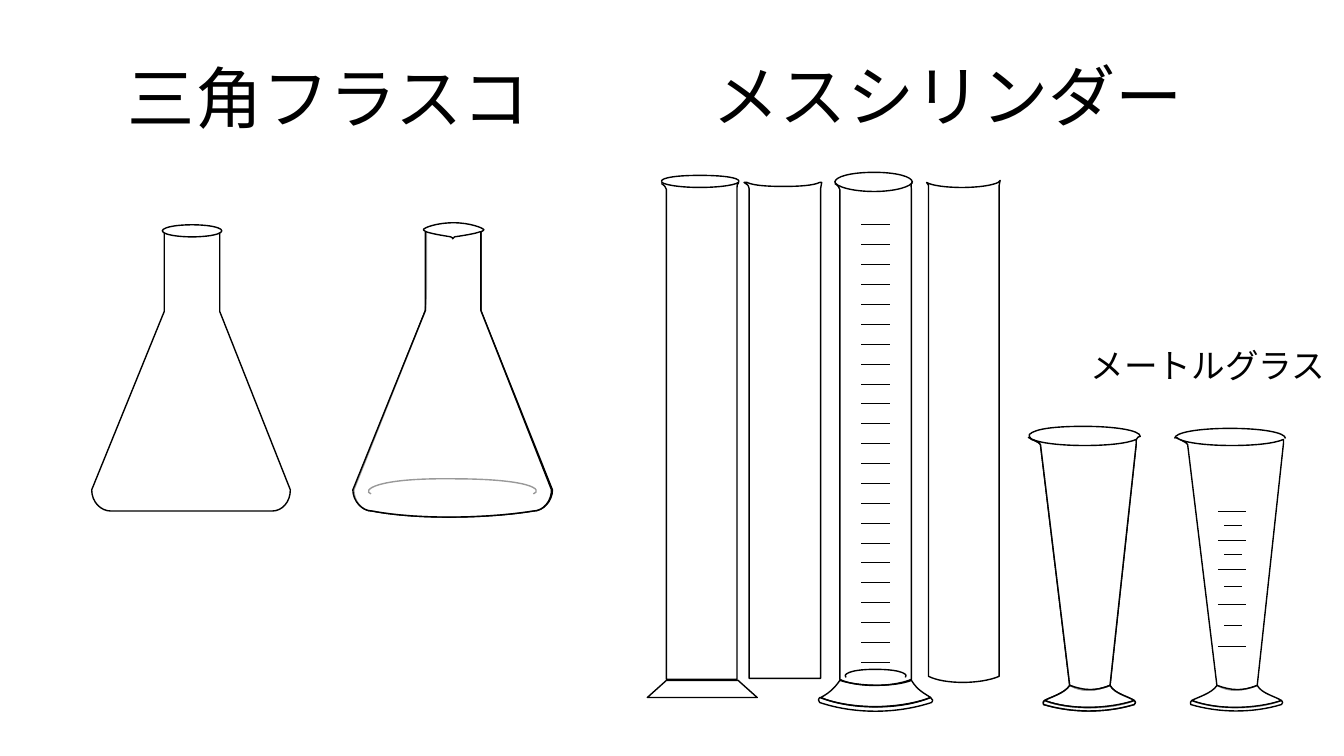
from lxml.etree import SubElement
from pptx import Presentation
from pptx.dml.color import RGBColor
from pptx.enum.shapes import MSO_CONNECTOR as Connector, MSO_SHAPE as Shape
from pptx.oxml.ns import qn
from pptx.util import Inches, Pt

BLACK = RGBColor(0, 0, 0)
WHITE = RGBColor(255, 255, 255)
FONT = "Noto Sans CJK JP"
UNIT = Inches(0.01)  # grid step of all outlines, counted from a glass's corner
CURVE_STEPS = 8
TAGS = {"M": "a:moveTo", "L": "a:lnTo", "C": "a:cubicBezTo"}


def add_label(slide, text, left, top, width, height, size=48, color=BLACK):
    frame = slide.shapes.add_textbox(
        Inches(left), Inches(top), Inches(width), Inches(height)).text_frame
    frame.word_wrap = True
    run = frame.paragraphs[0].add_run()
    run.text = text
    run.font.name, run.font.size, run.font.color.rgb = FONT, Pt(size), color
    SubElement(run.font._element, qn("a:ea"), typeface=FONT)


def style(shape, fill=None, opacity=100):
    shape.shadow.inherit = False
    shape.line.color.rgb, shape.line.width = BLACK, Pt(1)
    if fill is None:
        shape.fill.background()
        return
    shape.fill.solid()
    shape.fill.fore_color.rgb = fill
    if opacity < 100:
        tint = shape.fill._xPr.find(qn("a:solidFill"))[0]
        SubElement(tint, qn("a:alpha"), val=str(opacity * 1000))


def bezier(p0, p1, p2, p3):
    for step in range(1, CURVE_STEPS + 1):
        t = step / CURVE_STEPS
        s = 1 - t
        yield tuple(s**3 * a + 3 * s * s * t * b + 3 * s * t * t * c + t**3 * d
                    for a, b, c, d in zip(p0, p1, p2, p3))


def read_outline(outline):
    """Split an outline into M, L and C commands with their points in EMU."""
    tokens = iter(outline.removesuffix("Z").split())
    return [(command, [(int(next(tokens)) * UNIT, int(next(tokens)) * UNIT)
                       for _ in range(3 if command == "C" else 1)])
            for command in tokens]


def draw(slide, box, outline, **fill):
    """Draw a freeform sized by its true extent, with real curves."""
    commands = read_outline(outline)
    points = []
    for command, ends in commands:
        points += bezier(points[-1], *ends) if command == "C" else ends
    closed = outline.endswith("Z")
    builder = slide.shapes.build_freeform(*points[0], scale=1.0)
    builder.add_line_segments(points[1:], close=closed)
    left, top = box
    shape = builder.convert_to_shape(Inches(left), Inches(top))

    min_x, min_y = (round(min(axis)) for axis in zip(*points))
    contour = next(shape._element.iter(qn("a:path")))
    for segment in list(contour):
        contour.remove(segment)
    for command, ends in commands:
        segment = SubElement(contour, qn(TAGS[command]))
        for x, y in ends:
            SubElement(segment, qn("a:pt"), x=str(x - min_x), y=str(y - min_y))
    if closed:
        SubElement(contour, qn("a:close"))
    style(shape, **fill)


def draw_clear(slide, box, *outlines):
    """Draw translucent glass."""
    for outline in outlines:
        draw(slide, box, outline, fill=WHITE, opacity=60)


def add_marks(slide, box, start, end, rows):
    left, top = (Inches(side) for side in box)
    for row in rows:
        y = top + round(row * UNIT)
        mark = slide.shapes.add_connector(
            Connector.STRAIGHT, left + start * UNIT, y, left + end * UNIT, y)
        mark.line.color.rgb, mark.line.width = BLACK, Pt(0.5)
        SubElement(mark._element.spPr, qn("a:effectLst"))


def flat_flask(slide, box):
    draw_clear(slide, box,
               "M 127 7 L 127 28 C 127 48 127 67 127 86 L 197 263 "
               "C 197 275 189 284 179 284 L 19 284 C 9 284 0 275 0 263 L 72 86 "
               "C 72 60 72 32 72 7 L 75 8 C 80 9 89 10 100 10 "
               "C 110 10 119 9 124 8 Z")
    left, top = box
    rim = slide.shapes.add_shape(Shape.OVAL, Inches(left + 0.7), Inches(top),
                                 Inches(0.59), Inches(0.12))
    style(rim, fill=WHITE)


def round_flask(slide, box):
    draw(slide, box,
         "M 100 0 C 116 0 129 5 130 7 L 129 8 L 127 9 L 127 29 "
         "C 127 50 127 68 127 87 L 198 265 C 198 276 189 286 179 286 "
         "C 136 293 67 295 19 286 C 9 286 1 276 1 265 L 72 87 "
         "C 73 75 73 61 73 48 L 73 9 L 71 8 L 70 7 C 70 5 83 0 100 0 Z",
         fill=WHITE)
    draw(slide, box, "M 18 269 C 9 266 20 253 99 254 C 177 254 189 265 179 269",
         fill=WHITE)
    draw_clear(slide, box,
               "M 127 9 L 127 29 C 127 50 127 68 127 87 L 197 265 "
               "C 197 276 189 286 179 286 C 136 293 66 295 19 286 "
               "C 9 286 0 276 0 265 L 72 87 L 72 9 L 73 9 C 78 11 91 13 97 14 "
               "C 99 14 99 16 99 16 C 100 16 100 14 101 14 "
               "C 108 13 121 11 126 9 Z")


def flat_cylinder(slide, box):
    wall = ("M 14 8 C 18 11 17 10 19 14 L 19 500 L 89 500 L 89 14 "
            "C 89 5 91 8 91 8")
    stand = "M 0 518 L 19 501 L 90 501 L 109 518 Z"
    rim_back = "M 14 6 C 14 2 31 0 52 0 C 74 0 91 2 91 6"
    rim_front = "M 91 6 C 91 9 74 12 52 12 C 31 12 14 9 14 6"
    for part in (wall, stand, rim_back, rim_front):
        draw(slide, box, part)


def round_cylinder(slide, box):
    wall = ("M 16 11 C 20 14 19 13 21 17 L 21 503 C 37 511 73 511 92 503 "
            "L 92 17 C 91 8 93 11 93 11")
    foot = ("M 2 521 C 8 518 15 513 21 504 C 39 510 74 511 92 504 "
            "C 98 514 105 517 111 521 C 80 534 30 533 2 521 Z")
    rim_back = "M 16 10 C 16 4 33 0 55 0 C 76 0 93 4 93 10"
    rim_front = "M 93 9 C 93 14 76 19 55 19 C 33 19 16 14 16 9"
    plate = ("M 1 526 C 0 523 -1 524 1 521 C 36 534 82 532 111 521 "
             "C 113 524 114 523 112 526 C 75 538 34 537 1 526 Z")
    for part in (wall, foot, rim_back, rim_front, plate):
        draw(slide, box, part)
    draw(slide, box, "M 27 501 C 24 499 28 493 56 493 C 85 493 89 499 86 501",
         fill=WHITE)
    add_marks(slide, box, 42, 71, [52 + 19.73 * i for i in range(23)])


def flat_front(slide, box):
    draw_clear(slide, box,
               "M 0 0 L 3 0 C 9 3 23 4 39 4 C 55 4 69 3 75 0 L 77 0 L 76 6 "
               "L 76 492 L 5 492 L 5 6 C 4 2 4 3 0 0 Z")


def round_front(slide, box):
    draw_clear(slide, box,
               "M 73 0 L 72 5 L 72 492 C 53 500 18 500 2 492 L 2 5 "
               "C 1 4 1 3 0 2 C 5 5 19 7 35 7 C 51 7 65 5 71 2 Z")


METER_FRONT = ("M 0 11 L 1 11 C 6 16 29 19 56 19 C 78 19 98 17 107 13 "
               "C 107 14 107 15 107 17 L 81 257 C 66 263 54 264 41 257 "
               "L 12 18 C 10 15 3 13 0 11 Z")
METER_FOOT = ("M 16 272 C 21 269 36 265 41 257 C 55 262 66 263 81 257 "
              "C 85 265 99 268 105 272 C 79 282 39 281 16 272 Z")
METER_PLATE = ("M 15 276 C 15 273 14 274 16 272 C 43 282 81 280 105 272 "
               "C 106 274 107 273 105 276 C 75 285 42 284 15 276 Z")


def plain_meter_glass(slide, box):
    draw_clear(slide, box,
               "M 55 0 C 86 0 111 4 111 10 C 111 10 106 10 107 17 L 81 257 "
               "C 65 263 54 264 41 257 L 12 18 C 11 16 6 14 3 13 L 1 10 L 1 8 "
               "C 7 2 29 0 55 0 Z")
    for part in (METER_FOOT, METER_PLATE):
        draw(slide, box, part)
    draw_clear(slide, box, METER_FRONT, METER_FOOT, METER_PLATE)


def marked_meter_glass(slide, box):
    draw_clear(slide, box, METER_FRONT, METER_FOOT, METER_PLATE)
    add_marks(slide, box, 42, 70, (84, 113, 142, 177, 218))
    add_marks(slide, box, 48, 66, (98, 127, 159, 197))
    draw(slide, box, "M -1 12 C -1 6 23 2 54 2 C 85 2 109 6 109 12")


def main():
    deck = Presentation()
    deck.slide_width, deck.slide_height = Inches(13.33), Inches(7.5)
    slide = deck.slides.add_slide(deck.slide_layouts[6])
    add_label(slide, "三角フラスコ", 1.17, 0.51, 4.42, 0.91)
    add_label(slide, "メスシリンダー", 6.97, 0.49, 5.76, 0.91)
    add_label(slide, "メートルグラス", 10.72, 3.37, 2.62, 0.52, size=24)
    round_flask(slide, (3.5, 2.21))
    flat_cylinder(slide, (6.42, 1.74))
    round_cylinder(slide, (8.12, 1.71))
    flat_flask(slide, (0.91, 2.23))
    marked_meter_glass(slide, (11.66, 4.23))
    plain_meter_glass(slide, (10.2, 4.23))
    round_front(slide, (9.19, 1.79))
    flat_front(slide, (7.38, 1.81))
    deck.save("out.pptx")


if __name__ == "__main__":
    main()
